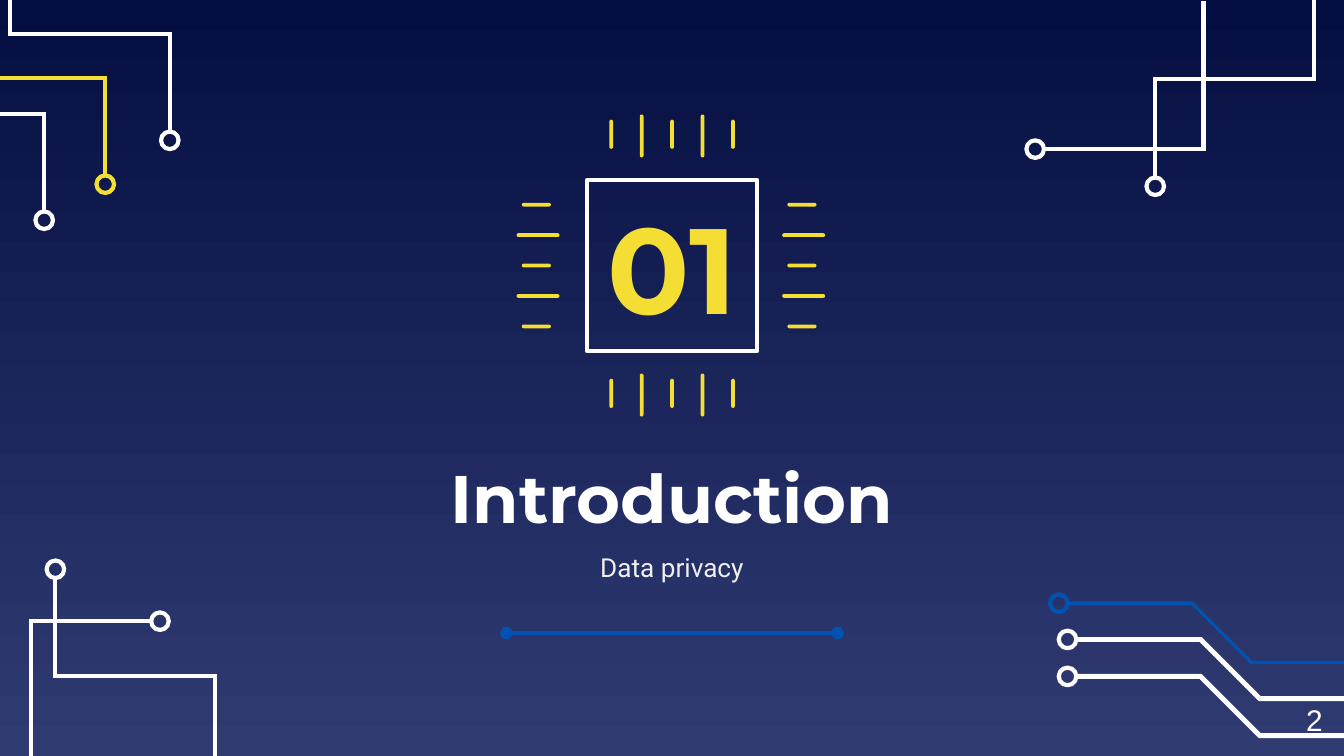
from lxml.etree import SubElement
from pptx import Presentation
from pptx.dml.color import RGBColor
from pptx.enum.shapes import MSO_CONNECTOR, MSO_SHAPE
from pptx.enum.text import MSO_ANCHOR, MSO_AUTO_SIZE, PP_ALIGN
from pptx.oxml.ns import qn
from pptx.util import Pt

NAVY = RGBColor(0x04, 0x0E, 0x41)
INDIGO = RGBColor(0x30, 0x3B, 0x72)
WHITE = RGBColor(0xFF, 0xFF, 0xFF)
PALE = RGBColor(0xEF, 0xEF, 0xEF)
YELLOW = RGBColor(0xF5, 0xDE, 0x34)
BLUE = RGBColor(0x01, 0x52, 0xB1)

WIDTH, HEIGHT = 720, 405
LINE_WIDTH = 2.25
NODE_RADIUS = 4.7


def place(shape, left, top, width, height):
    shape.left, shape.top = Pt(left), Pt(top)
    shape.width, shape.height = Pt(width), Pt(height)


def write(shape, text, font="Montserrat", size=14, color=WHITE, bold=False,
          align=PP_ALIGN.CENTER, anchor=MSO_ANCHOR.MIDDLE, inset=7.2):
    frame = shape.text_frame
    frame.word_wrap = True
    frame.auto_size = MSO_AUTO_SIZE.NONE
    frame.vertical_anchor = anchor
    frame.margin_left = frame.margin_right = Pt(inset)
    frame.margin_top = frame.margin_bottom = Pt(inset)
    paragraph = frame.paragraphs[0]
    paragraph.alignment = align
    paragraph.space_before = Pt(0)
    run = paragraph.add_run()
    run.text = text
    run.font.name, run.font.size = font, Pt(size)
    run.font.bold, run.font.color.rgb = bold, color


def outline(shape, color, width=LINE_WIDTH):
    shape.shadow.inherit = False
    shape.fill.background()
    shape.line.color.rgb = color
    shape.line.width = Pt(width)


def add_trace(slide, points, color, width=LINE_WIDTH):
    """Draw a circuit trace that starts at the edge of a ring on its first point."""
    (node_x, node_y), (next_x, next_y) = points[:2]
    length = abs(next_x - node_x) + abs(next_y - node_y)
    share = NODE_RADIUS / length
    start = (node_x + (next_x - node_x) * share, node_y + (next_y - node_y) * share)

    builder = slide.shapes.build_freeform(Pt(start[0]), Pt(start[1]))
    builder.add_line_segments([(Pt(x), Pt(y)) for x, y in points[1:]], close=False)
    trace = builder.convert_to_shape()
    outline(trace, color, width)
    SubElement(trace.line._get_or_add_ln(), qn("a:miter"), lim="800000")

    ring = slide.shapes.add_shape(
        MSO_SHAPE.OVAL, Pt(node_x - NODE_RADIUS), Pt(node_y - NODE_RADIUS),
        Pt(2 * NODE_RADIUS), Pt(2 * NODE_RADIUS))
    outline(ring, color)


def add_corner(slide, left, top, traces):
    """Draw traces given as (points, color, width) relative to the corner box."""
    for points, color, width in traces:
        add_trace(slide, [(left + x, top + y) for x, y in points], color, width)


def add_circuits(slide):
    # Top left
    add_corner(slide, 0, 0, [
        ([(23.7, 118), (23.7, 61.1), (0, 61.1)], WHITE, LINE_WIDTH),
        ([(56.4, 98.7), (56.4, 41.7), (0, 41.7)], YELLOW, LINE_WIDTH),
        ([(91, 75.2), (91, 18.2), (5.5, 18.2), (5.5, 0)], WHITE, LINE_WIDTH),
    ])
    # Top right
    add_corner(slide, 540, 0, [
        ([(14.6, 79.9), (104.8, 79.9), (104.8, 0.7)], WHITE, LINE_WIDTH),
        ([(78.9, 99.8), (78.9, 42.4), (164, 42.4), (164, 0)], WHITE, LINE_WIDTH),
    ])
    # Bottom left
    add_corner(slide, 0, 300, [
        ([(29.7, 5), (29.7, 62.2), (115.2, 62.2), (115.2, 105)], WHITE, LINE_WIDTH),
        ([(85.7, 32.8), (16.6, 32.8), (16.6, 105)], WHITE, LINE_WIDTH),
    ])
    # Bottom right: parallel bus lines
    for left, top, color, width in [(567.3, 323.2, BLUE, 1.9),
                                    (571.9, 342.6, WHITE, 2.6),
                                    (571.9, 362.4, WHITE, 2.6)]:
        bus = [(0, 0), (71.3, 0), (103, 31.7), (WIDTH - left, 31.7)]
        add_corner(slide, left, top, [(bus, color, width)])


def add_pins(slide, center_x, center_y, vertical, direction):
    """Draw five pins in a row; every second pin is longer and set off by 1 pt."""
    pitch, thickness = 16.3, 2
    for index in range(5):
        long_pin = index % 2 == 1
        length = 23 if long_pin else 15.6
        step = (index - 2) * pitch
        shift = direction if long_pin else 0
        if vertical:
            x, y, width, height = center_x + step, center_y + shift, thickness, length
        else:
            x, y, width, height = center_x + shift, center_y + step, length, thickness
        pin = slide.shapes.add_shape(
            MSO_SHAPE.ROUNDED_RECTANGLE, Pt(x - width / 2), Pt(y - height / 2),
            Pt(width), Pt(height))
        pin.adjustments[0] = 0.5
        pin.shadow.inherit = False
        pin.fill.solid()
        pin.fill.fore_color.rgb = YELLOW
        pin.line.fill.background()


def add_chip(slide, left, top, size, number):
    center_x, center_y = left + size / 2, top + size / 2
    chip = slide.shapes.add_shape(MSO_SHAPE.RECTANGLE, Pt(left), Pt(top), Pt(size), Pt(size))
    outline(chip, WHITE)
    write(chip, number, size=65, color=YELLOW, bold=True)
    add_pins(slide, center_x - 72.7, center_y, vertical=False, direction=0.9)
    add_pins(slide, center_x + 69.6, center_y, vertical=False, direction=0.9)
    add_pins(slide, center_x, center_y - 70.3, vertical=True, direction=0.9)
    add_pins(slide, center_x, center_y + 68.5, vertical=True, direction=0.9)


def add_heading(slide, left, top, width, title, subtitle):
    # Title and subtitle
    place(slide.shapes.title, left, top, width, 48.2)
    write(slide.shapes.title, title, size=36, bold=True)
    subtitle_box = slide.placeholders[1]
    place(subtitle_box, left, top + 45.4, width, 33.1)
    write(subtitle_box, subtitle, font="Roboto", color=PALE)

    # Rule with round ends
    center, rule_y, half = left + width / 2, top + 97.2, 88.7
    rule = slide.shapes.add_connector(
        MSO_CONNECTOR.STRAIGHT, Pt(center - half), Pt(rule_y), Pt(center + half), Pt(rule_y))
    rule.line.color.rgb = BLUE
    rule.line.width = Pt(LINE_WIDTH)
    for end in ("a:headEnd", "a:tailEnd"):
        SubElement(rule.line._get_or_add_ln(), qn(end), type="oval")
    SubElement(rule._element.spPr, qn("a:effectLst"))


def add_page_number(slide, left, top, number):
    box = slide.shapes.add_textbox(Pt(left), Pt(top), Pt(23), Pt(26.6))
    write(box, number, font="Arial", size=16, align=PP_ALIGN.LEFT,
          anchor=MSO_ANCHOR.TOP, inset=3.6)
    box.text_frame.margin_left = Pt(7.2)


def set_background(slide):
    fill = slide.background.fill
    fill.gradient()
    fill.gradient_angle = 270
    for stop, color in zip(fill.gradient_stops, (NAVY, INDIGO)):
        stop.color.rgb = color


def main():
    presentation = Presentation()
    presentation.slide_width, presentation.slide_height = Pt(WIDTH), Pt(HEIGHT)
    slide = presentation.slides.add_slide(presentation.slide_layouts[0])
    set_background(slide)
    add_circuits(slide)
    add_heading(slide, 193, 241.9, 334, "Introduction", "Data privacy")
    add_chip(slide, 314.4, 96.6, 91.3, "01")
    add_page_number(slide, 692.6, 372.2, "2")
    presentation.save("out.pptx")


if __name__ == "__main__":
    main()
